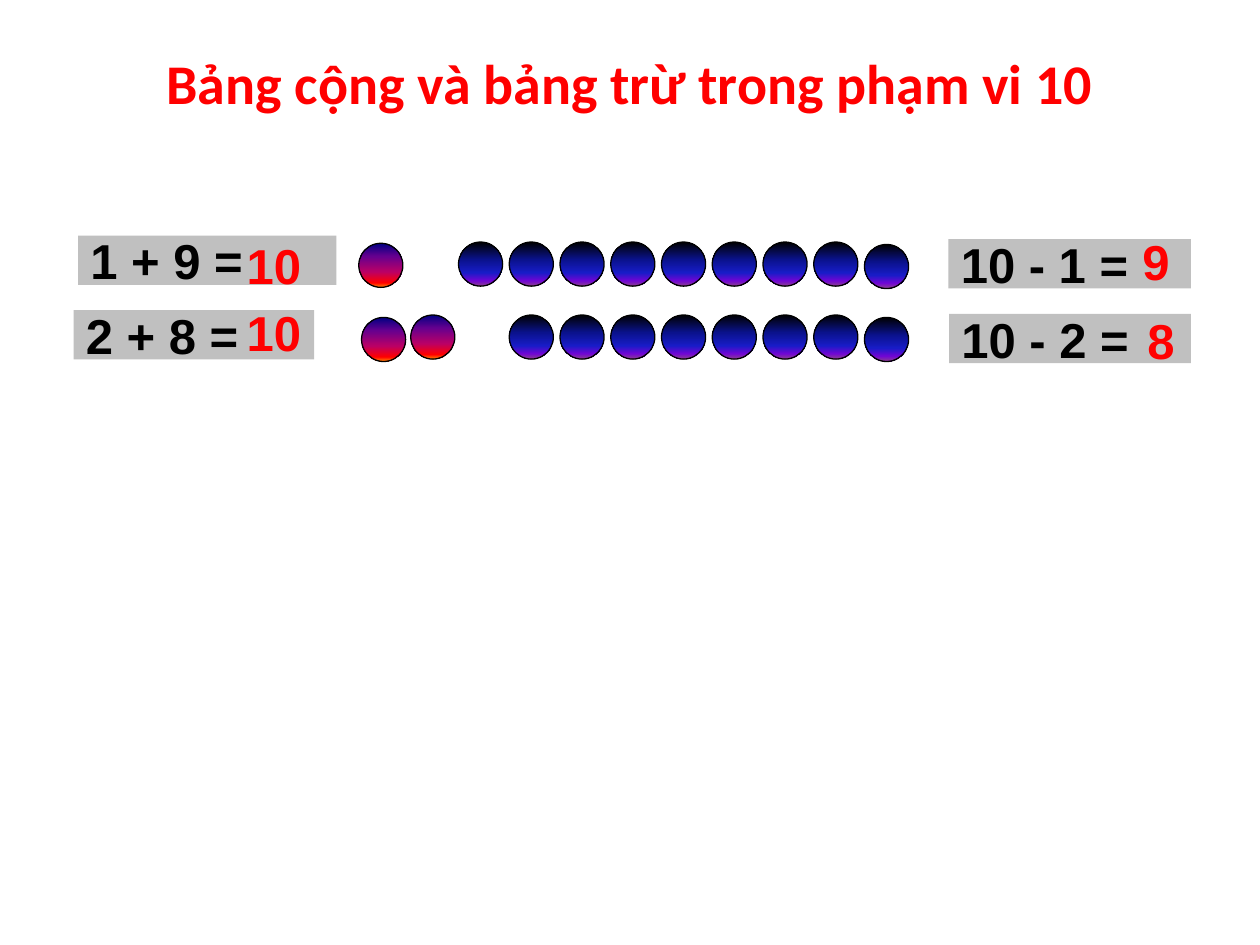
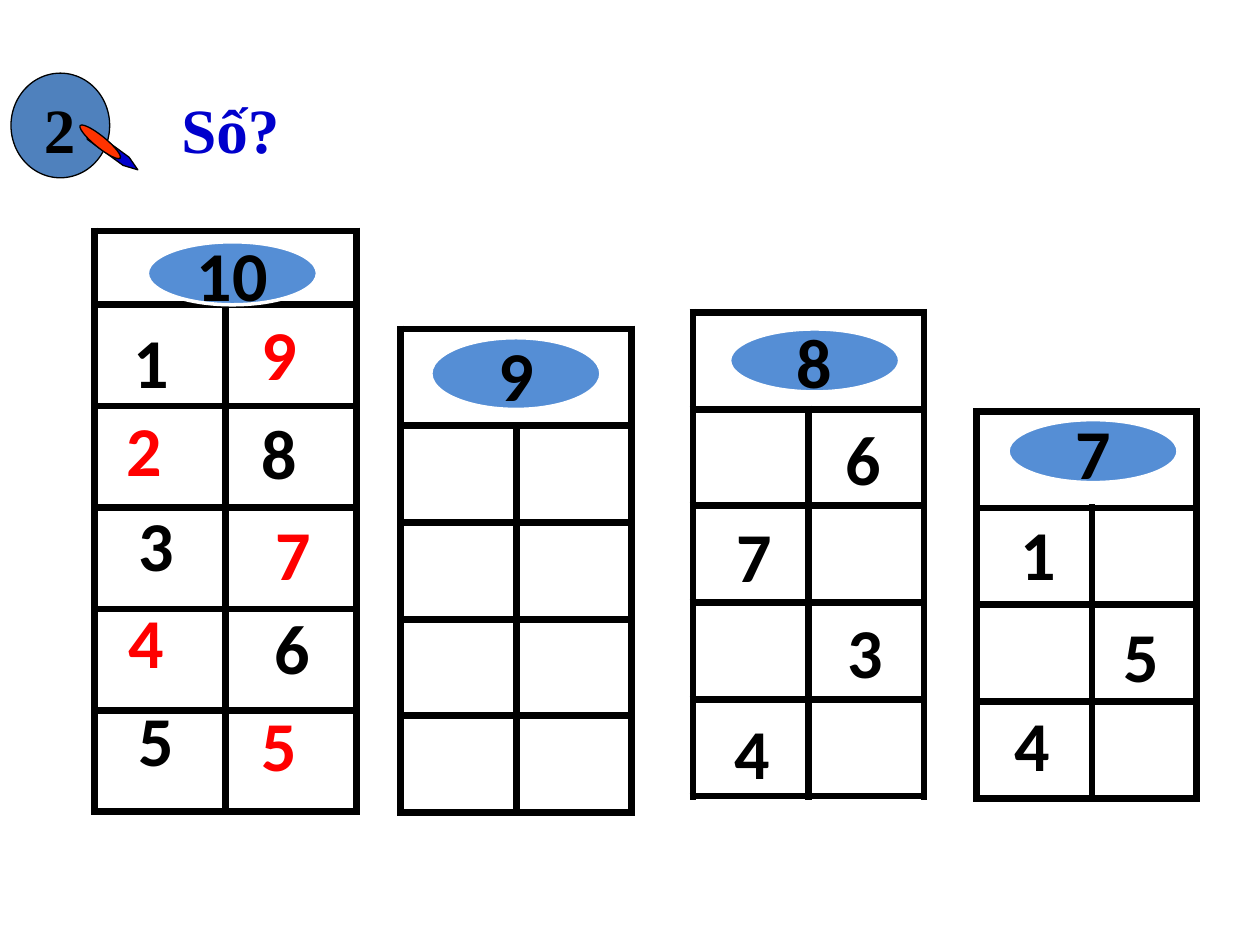
from lxml import etree
from pptx import Presentation
from pptx.dml.color import RGBColor
from pptx.enum.shapes import MSO_SHAPE
from pptx.enum.text import MSO_ANCHOR, PP_ALIGN
from pptx.oxml.ns import qn
from pptx.util import Pt

OVAL, RECTANGLE, PENTAGON = MSO_SHAPE.OVAL, MSO_SHAPE.RECTANGLE, MSO_SHAPE.PENTAGON
MIDDLE = MSO_ANCHOR.MIDDLE
LEFT, CENTER = PP_ALIGN.LEFT, PP_ALIGN.CENTER

BLACK, WHITE, RED, GRAY = "000000", "FFFFFF", "FF0000", "C0C0C0"
INK, HEADER_BLUE, BADGE_BLUE, PENCIL_RED = "0000CC", "558ED5", "4F81BD", "FF3300"
BLUE_DOT = ((0, "000000"), (40, "0A128C"), (70, "181CC7"), (88, "7005D4"), (100, "8C3D91"))
RED_DOT = ((0, "000082"), (30, "66008F"), (65, "BA0066"), (90, "FF0000"), (100, "FF8200"))
SANS, BODY, SERIF = "Arial", "Calibri", "Times New Roman"
DOT_SIZE, DOT_PITCH, FIRST_DOT, LAST_DOT = 25.2, 29, 262, 8
ROW_HEIGHT = 55.3


def color(value):
    return RGBColor.from_string(value)


class Deck:
    """Holds the shared style and the current slide."""

    def __init__(self):
        self.presentation = Presentation()
        self.presentation.slide_width = Pt(720)
        self.presentation.slide_height = Pt(540)
        self.slide = None

    def new_slide(self):
        self.slide = self.presentation.slides.add_slide(self.presentation.slide_layouts[6])

    def set_text(self, shape, text, font, size, text_color, align=LEFT):
        shape.text_frame.text = text
        paragraph = shape.text_frame.paragraphs[0]
        paragraph.alignment = align
        run_font = paragraph.runs[0].font
        run_font.name, run_font.size, run_font.bold = font, Pt(size), True
        run_font.color.rgb = color(text_color)

    def text(self, box, text, font, size, text_color, align=LEFT):
        shape = self.slide.shapes.add_textbox(*map(Pt, box))
        shape.text_frame.word_wrap = True
        self.set_text(shape, text, font, size, text_color, align)

    def shape(self, kind, box, fill, line=None, width=0.75, rotation=0):
        shape = self.slide.shapes.add_shape(kind, *map(Pt, box))
        shape.shadow.inherit = False
        shape.rotation = rotation
        shape.fill.solid()
        shape.fill.fore_color.rgb = color(fill)
        if line:
            shape.line.color.rgb = color(line)
            shape.line.width = Pt(width)
        else:
            shape.line.fill.background()
        return shape

    def dot(self, left, top, stops):
        shape = self.shape(OVAL, (left, top, DOT_SIZE, DOT_SIZE), BLACK, BLACK)
        shape.fill.gradient()
        shape.fill.gradient_angle = 270
        stop_list = shape._element.spPr.find(".//" + qn("a:gsLst"))
        stop_list.clear()
        for position, value in stops:
            stop = etree.SubElement(stop_list, qn("a:gs"), pos=str(position * 1000))
            etree.SubElement(stop, qn("a:srgbClr"), val=value)

    def label(self, box, text, text_color, align=LEFT):
        shape = self.shape(RECTANGLE, box, GRAY)
        shape.text_frame.word_wrap = False
        shape.text_frame.vertical_anchor = MIDDLE
        self.set_text(shape, text, SANS, 28, text_color, align)

    def header(self, box, text):
        shape = self.shape(OVAL, box, HEADER_BLUE, WHITE, 2)
        shape.text_frame.vertical_anchor = MIDDLE
        self.set_text(shape, text, BODY, 40, BLACK, CENTER)

    def digit(self, left, top, text, text_color=BLACK):
        self.text((left, top, 39, 55.4), text, BODY, 40, text_color)

    def grid(self, left, top, columns, rows):
        frame = self.slide.shapes.add_table(
            len(rows), len(columns), Pt(left), Pt(top), Pt(sum(columns)), Pt(sum(rows)))
        table = frame.table
        table.first_row = table.horz_banding = False
        for column, width in zip(table.columns, columns):
            column.width = Pt(width)
        for row, height in zip(table.rows, rows):
            row.height = Pt(height)
        for cell in table.iter_cells():
            cell.fill.background()
            self.border(cell)
        table.cell(0, 0).merge(table.cell(0, len(columns) - 1))

    def border(self, cell):
        properties = cell._tc.get_or_add_tcPr()
        for index, side in enumerate("LRTB"):
            line = etree.Element(qn("a:ln" + side), w=str(Pt(4.5)))
            fill = etree.SubElement(line, qn("a:solidFill"))
            etree.SubElement(fill, qn("a:srgbClr"), val=BLACK)
            properties.insert(index, line)


def build_sums(deck):
    deck.new_slide()
    for first, top in ((0, 138.3), (1, 180)):
        for index in range(first, LAST_DOT + 1):
            drop = 1.4 if index == LAST_DOT else 0
            deck.dot(FIRST_DOT + index * DOT_PITCH, top + drop, BLUE_DOT)
    for left, top in ((205, 139), (234.7, 180), (206.6, 181.4)):
        deck.dot(left, top, RED_DOT)
    sums = (
        ((44.6, 134.6, 147.6, 28.2), "1 + 9 =", (139.7, 140.4, 33.8, 22.3), "10"),
        ((42, 177.2, 137.5, 28.2), "2 + 8 =", (139.7, 179.6, 33.8, 20.2), "10"),
        ((542, 136.6, 138.6, 28.2), "10 - 1 =", (643.7, 137, 33.8, 24.5), "9"),
        ((542.3, 179.3, 138.2, 28.2), "10 - 2 =", (646.6, 183.6, 33.8, 21), "8"),
    )
    for box, question, answer_box, answer in sums:
        deck.label(box, question, BLACK)
        deck.label(answer_box, answer, RED, CENTER)
    deck.text((0, 24, 720, 46), "Bảng cộng và bảng trừ trong phạm vi 10", BODY, 32, RED, CENTER)


def build_number_tables(deck):
    deck.new_slide()
    deck.shape(OVAL, (6.3, 41.8, 56.4, 59.8), BADGE_BLUE, BLACK)
    deck.text((18, 48.2, 23.8, 51), "2", SERIF, 36, BLACK)
    deck.text((96.5, 48.2, 420, 51), "Số?", SERIF, 36, INK)
    pencil = deck.shape(PENTAGON, (48.2, 84.2, 33.8, 5.8), INK, BLACK, rotation=36.1)
    pencil.adjustments[0] = 1.42
    deck.shape(OVAL, (42.5, 77.8, 29.5, 6.5), PENCIL_RED, BLACK, rotation=39.1)

    tables = (
        (54, 132, (75, 75), [42] + [58] * 5, (84.2, 138.2, 97.2, 36), "10"),
        (229, 188, (66, 66), [ROW_HEIGHT] * 5, (246.2, 193, 97.2, 41), "9"),
        (396, 178.5, (66, 66), [ROW_HEIGHT] * 5, (416.9, 188, 97.2, 36), "8"),
        (558, 235, (66, 60), [ROW_HEIGHT] * 4, (576, 239.8, 97.2, 36), "7"),
    )
    for left, top, columns, rows, header_box, total in tables:
        deck.grid(left, top, columns, rows)
        deck.header(header_box, total)

    given = (
        (69, 178.6, "1"), (142.6, 230.4, "8"), (72, 283, "3"), (149.8, 342, "6"),
        (72, 394.6, "5"), (476, 234, "6"), (414, 289.4, "7"), (477.4, 344.2, "3"),
        (412.6, 401.8, "4"), (576, 288, "1"), (635, 346.3, "5"), (572.4, 397.4, "4"),
    )
    for left, top, text in given:
        deck.digit(left, top, text)
    answers = (
        (142.6, 174.2, "9"), (65.5, 229, "2"), (150.5, 288, "7"),
        (66.2, 338.4, "4"), (142.6, 397.4, "5"),
    )
    for left, top, text in answers:
        deck.digit(left, top, text, RED)


def main():
    deck = Deck()
    build_sums(deck)
    build_number_tables(deck)
    deck.presentation.save("out.pptx")


if __name__ == "__main__":
    main()
